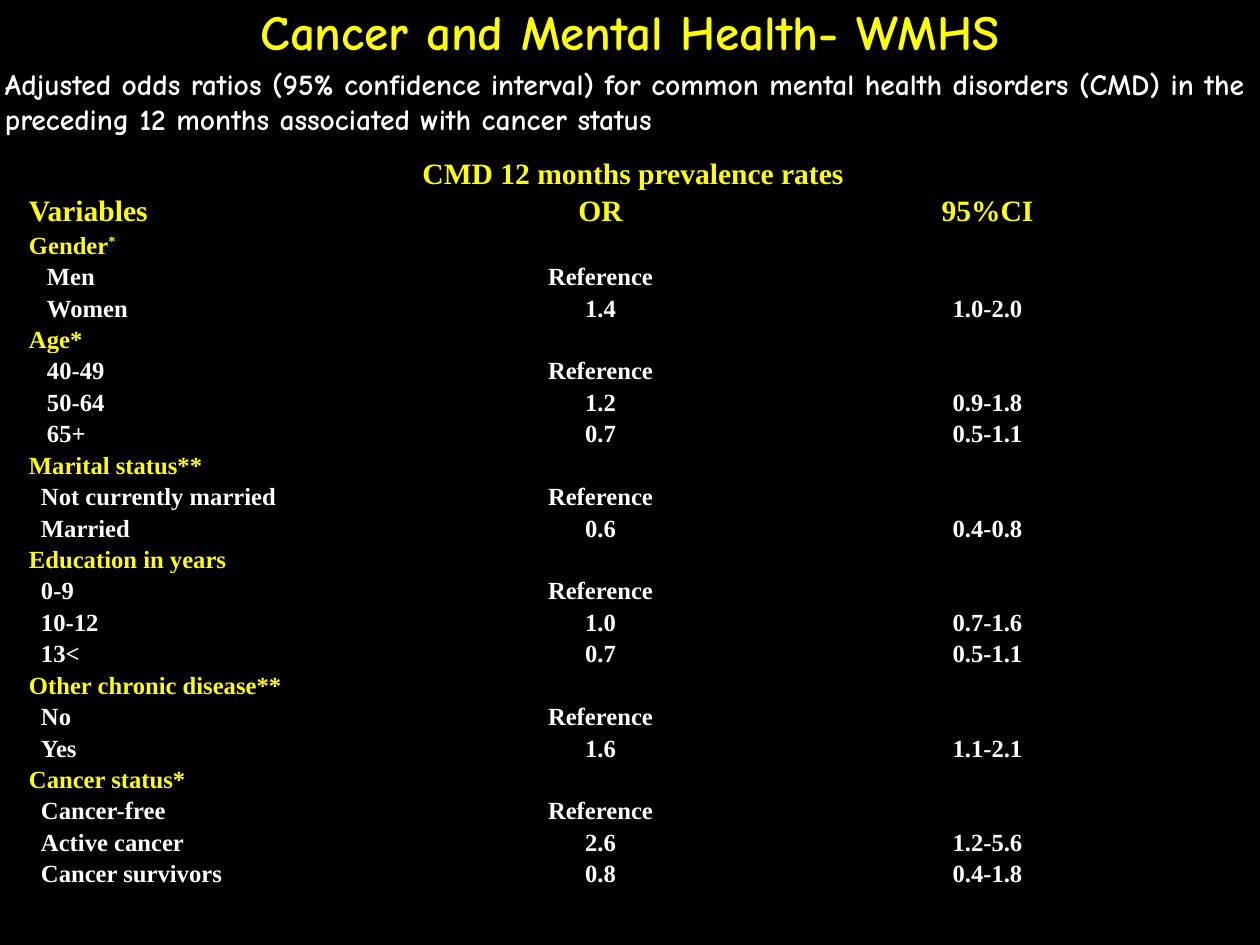
from lxml import etree
from pptx import Presentation
from pptx.dml.color import RGBColor
from pptx.enum.text import MSO_ANCHOR, MSO_AUTO_SIZE, PP_ALIGN
from pptx.oxml.ns import qn
from pptx.util import Pt

# Content
TITLE = "Cancer and Mental Health- WMHS"
SUBTITLE = ("Adjusted odds ratios (95% confidence interval) for common mental health "
            "disorders (CMD) in the preceding 12 months associated with cancer status")
RATES_HEADING = "CMD 12 months prevalence rates"
COLUMN_HEADINGS = ("Variables", "OR", "95%CI")
REF = "Reference"
# Variable, superscript mark, indent of its levels in px, levels
VARIABLES = [
    ("Gender", "*", 18, [("Men", REF, ""), ("Women", "1.4", "1.0-2.0")]),
    ("Age*", "", 18, [("40-49", REF, ""), ("50-64", "1.2", "0.9-1.8"),
                      ("65+", "0.7", "0.5-1.1")]),
    ("Marital status**", "", 12, [("Not currently married", REF, ""),
                                  ("Married", "0.6", "0.4-0.8")]),
    ("Education in years", "", 12, [("0-9", REF, ""), ("10-12", "1.0", "0.7-1.6"),
                                    ("13<", "0.7", "0.5-1.1")]),
    ("Other chronic disease**", "", 12, [("No", REF, ""), ("Yes", "1.6", "1.1-2.1")]),
    ("Cancer status*", "", 12, [("Cancer-free", REF, ""),
                                ("Active cancer", "2.6", "1.2-5.6"),
                                ("Cancer survivors", "0.8", "0.4-1.8")]),
]

# Format
PX = 10320
BLACK = RGBColor(0x00, 0x00, 0x00)
WHITE = RGBColor(0xFF, 0xFF, 0xFF)
YELLOW = RGBColor(0xFF, 0xFF, 0x00)
HEADING_FONT, TABLE_FONT = "Comic Neue", "Times New Roman"
LEFT, CENTER = PP_ALIGN.LEFT, PP_ALIGN.CENTER
TOP, BOTTOM, NO_FIT = MSO_ANCHOR.TOP, MSO_ANCHOR.BOTTOM, MSO_AUTO_SIZE.NONE
SLIDE_W, SLIDE_H = 1260, 945
TABLE_LEFT, TABLE_TOP = 27, 153
COLUMN_WIDTHS = (438, 271, 503)
ROW_HEIGHT, CELL_INSET, HEADING_INSET = 27, 2, 5


def write(frame, text, size=20, color=WHITE, font=TABLE_FONT, align=LEFT,
          spacing=None, superscript=""):
    paragraph = frame.paragraphs[0]
    properties = paragraph._p.get_or_add_pPr()
    properties.set("marL", "0")
    properties.set("indent", "0")
    etree.SubElement(properties, qn("a:buNone"))
    paragraph.alignment = align
    paragraph.space_before = Pt(0)
    if spacing:
        paragraph.line_spacing = spacing
    for part in filter(None, (text, superscript)):
        run = paragraph.add_run()
        run.text = part
        run.font.name, run.font.size, run.font.bold = font, Pt(size), True
        run.font.color.rgb = color
    if superscript:
        run._r.get_or_add_rPr().set("baseline", "30000")


def place_heading(holder, box, text, anchor, **text_format):
    holder.left, holder.top, holder.width, holder.height = (v * PX for v in box)
    frame = holder.text_frame
    frame.word_wrap, frame.auto_size, frame.vertical_anchor = True, NO_FIT, anchor
    frame.margin_left = frame.margin_right = HEADING_INSET * PX
    frame.margin_top = frame.margin_bottom = HEADING_INSET * PX
    write(frame, text, font=HEADING_FONT, **text_format)


def fill_cell(cell, text="", indent=0, **text_format):
    cell.margin_left = (CELL_INSET + indent) * PX
    cell.margin_right = CELL_INSET * PX
    cell.margin_top = cell.margin_bottom = 0
    for side in ("a:lnL", "a:lnR", "a:lnT", "a:lnB"):
        line = etree.SubElement(cell._tc.get_or_add_tcPr(), qn(side), w=str(Pt(1)))
        fill = etree.SubElement(line, qn("a:solidFill"))
        etree.SubElement(fill, qn("a:srgbClr"), val=str(BLACK))
    cell.fill.solid()
    cell.fill.fore_color.rgb = BLACK
    if text:
        write(cell.text_frame, text, spacing=1.15, **text_format)


deck = Presentation()
deck.slide_width, deck.slide_height = SLIDE_W * PX, SLIDE_H * PX
slide = deck.slides.add_slide(deck.slide_layouts[1])
slide.background.fill.solid()
slide.background.fill.fore_color.rgb = BLACK

# Title and subtitle
title, subtitle = slide.placeholders
place_heading(title, (0, -66, SLIDE_W, 131), TITLE, BOTTOM,
              size=40, color=YELLOW, align=CENTER)
place_heading(subtitle, (0, 61, SLIDE_W, 106), SUBTITLE, TOP, size=24)

# Table rows: texts with the format of the row and of its first cell
heading = {"size": 24, "color": YELLOW}
rows = [((RATES_HEADING, "", ""), heading, {"align": CENTER}),
        (COLUMN_HEADINGS, heading, {})]
for variable, mark, indent, levels in VARIABLES:
    rows.append(((variable, "", ""), {"color": YELLOW}, {"superscript": mark}))
    rows += [(level, {}, {"indent": indent}) for level in levels]

# Odds ratio table
odds = slide.shapes.add_table(
    len(rows), len(COLUMN_WIDTHS), TABLE_LEFT * PX, TABLE_TOP * PX,
    sum(COLUMN_WIDTHS) * PX, len(rows) * ROW_HEIGHT * PX).table
odds.first_row = odds.horz_banding = False
for column, width in zip(odds.columns, COLUMN_WIDTHS):
    column.width = width * PX
for r, (texts, row_format, first_format) in enumerate(rows):
    odds.rows[r].height = ROW_HEIGHT * PX
    for c, text in enumerate(texts):
        extra = {"align": CENTER} if c else first_format
        fill_cell(odds.cell(r, c), text, **row_format, **extra)
odds.cell(0, 0).merge(odds.cell(0, len(COLUMN_WIDTHS) - 1))

deck.save("out.pptx")
